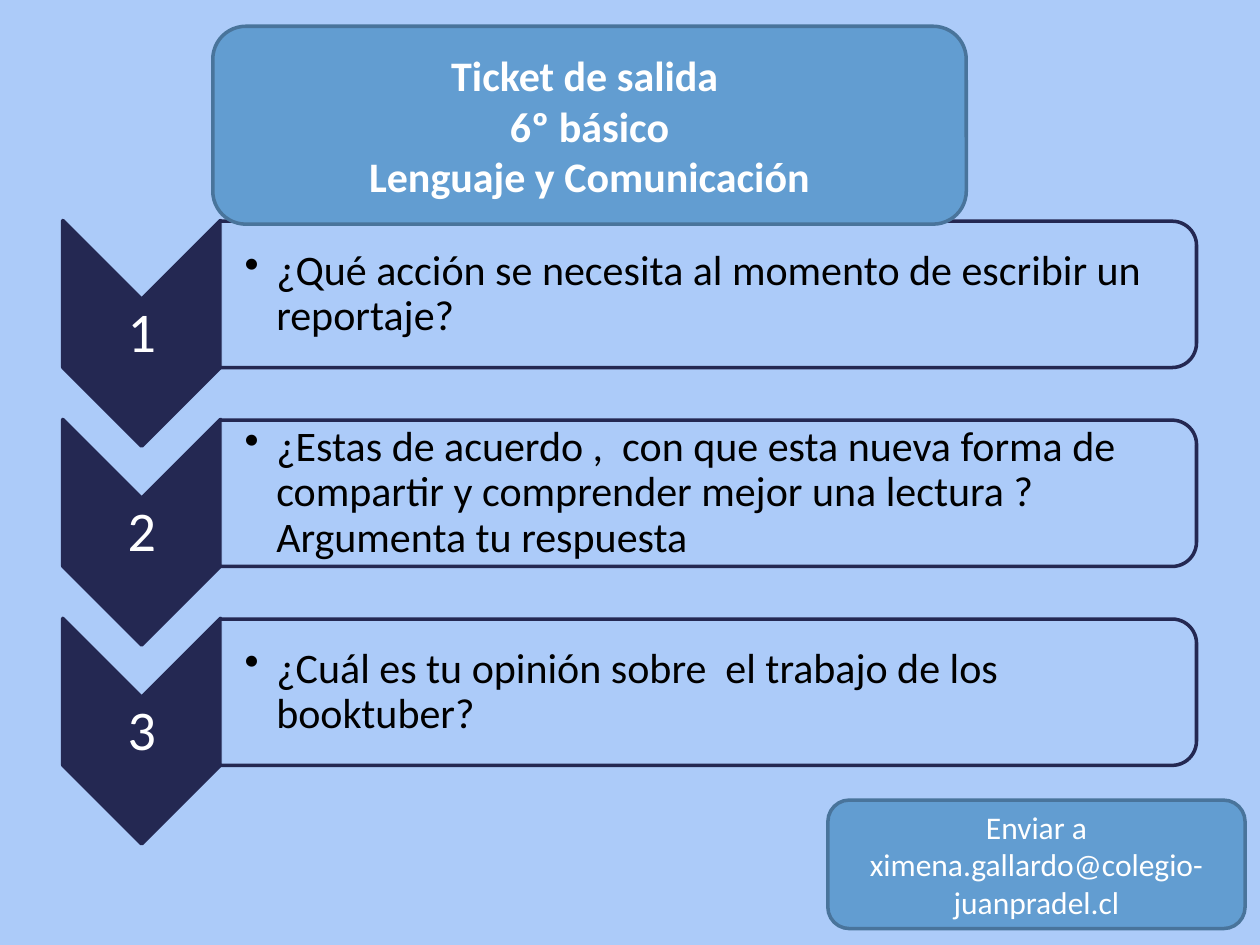
from lxml import etree
from pptx import Presentation
from pptx import util as u
from pptx.dml.color import RGBColor
from pptx.enum import shapes, text
from pptx.oxml.ns import qn

HUES = {"sky": "ACCBF9", "navy": "242852", "blue": "629DD1",
        "edge": "49749B", "white": "FFFFFF", "black": "000000"}
KIND = shapes.MSO_SHAPE
ASKS = [
    "¿Qué acción se necesita al momento de escribir un reportaje?",
    "¿Estas de acuerdo ,  con que esta nueva forma de compartir y "
    "comprender mejor una lectura ? Argumenta tu respuesta",
    "¿Cuál es tu opinión sobre  el trabajo de los booktuber?",
]
CARDS = [
    ((4.29, 0.53, 15.19, 3.99), 24, True,
     "Ticket de salida \n6º básico\nLenguaje y Comunicación"),
    ((16.69, 16.13, 8.41, 2.59), 18, False,
     "Enviar a ximena.gallardo@colegio-juanpradel.cl"),
]
PITCH = 4.01


def draw(home, kind, box, fill, line):
    shape = home.add_shape(kind, *map(u.Cm, box))
    shape.shadow.inherit = False
    shape.fill.solid()
    shape.fill.fore_color.rgb = RGBColor.from_string(HUES[fill])
    shape.line.color.rgb = RGBColor.from_string(HUES[line])
    shape.line.width = u.Pt(2)
    return shape


def write(shape, words, size, hue, align, bold=False):
    frame = shape.text_frame
    frame.word_wrap = True
    frame.vertical_anchor = text.MSO_ANCHOR.MIDDLE
    frame.text = words
    for para in frame.paragraphs:
        para.alignment = align
        para.font.name = "Calibri"
        para.font.size = u.Pt(size)
        para.font.bold = bold
        para.font.color.rgb = RGBColor.from_string(HUES[hue])
    return frame


deck = Presentation()
deck.slide_width, deck.slide_height = u.Cm(25.4), u.Cm(19.05)
slide = deck.slides.add_slide(deck.slide_layouts[6])
slide.background.fill.solid()
slide.background.fill.fore_color.rgb = RGBColor.from_string(HUES["sky"])

# Numbered questions: a chevron and a panel, both turned a quarter
steps = slide.shapes.add_group_shape().shapes
for i, ask in enumerate(ASKS):
    drop = i * PITCH
    arrow = draw(steps, KIND.CHEVRON, (0.58, 5.13 + drop, 4.55, 3.18), "navy", "navy")
    arrow.rotation = 90
    label = steps.add_textbox(*map(u.Cm, (1.27, 6.05 + drop, 3.18, 1.37)))
    num = write(label, str(i + 1), 32, "white", text.PP_ALIGN.CENTER)

    panel = draw(steps, KIND.ROUND_2_SAME_RECTANGLE,
                 (12.8, -3.91 + drop, 2.95, 19.69), "sky", "navy")
    panel.rotation = 90
    tint = panel.fill.fore_color._xFill.find(qn("a:srgbClr"))
    etree.SubElement(tint, qn("a:alpha"), val="90000")
    label = steps.add_textbox(*map(u.Cm, (4.45, 4.6 + drop, 19.53, 2.67)))
    body = write(label, ask, 24, "black", text.PP_ALIGN.LEFT)

    for frame in (num, body):
        frame.margin_left = frame.margin_right = u.Cm(0.05)
        frame.margin_top = frame.margin_bottom = u.Cm(0.05)
        frame.paragraphs[0].line_spacing = 0.9
    body.margin_left = u.Cm(0.48)
    para = body.paragraphs[0]
    para.level = 1
    props = para._p.get_or_add_pPr()
    props.set("marL", str(u.Cm(0.64)))
    props.set("indent", str(-u.Cm(0.64)))
    mark = etree.Element(qn("a:buChar"), char="•")
    props.find(qn("a:defRPr")).addprevious(mark)

# Title and address cards
for box, size, bold, words in CARDS:
    card = draw(slide.shapes, KIND.ROUNDED_RECTANGLE, box, "blue", "edge")
    write(card, words, size, "white", text.PP_ALIGN.CENTER, bold)

deck.save("out.pptx")
